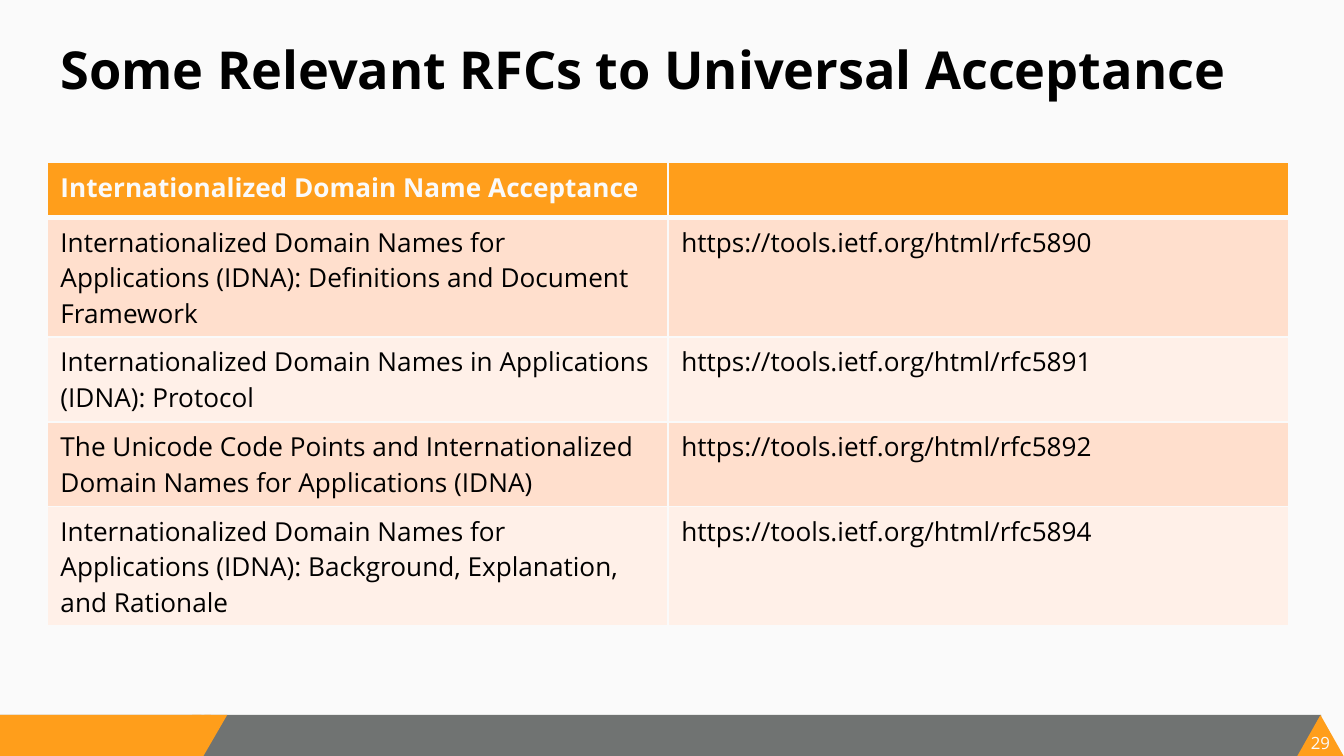
"""Build the slide that lists RFCs relevant to Universal Acceptance."""
import dataclasses

import pptx
import pptx.dml.color
import pptx.enum.shapes
import pptx.enum.text
import pptx.oxml
import pptx.oxml.ns
import pptx.util

Inches = pptx.util.Inches
Pt = pptx.util.Pt
RGB = pptx.dml.color.RGBColor.from_string
Shape = pptx.enum.shapes.MSO_SHAPE
Align = pptx.enum.text.PP_ALIGN
Anchor = pptx.enum.text.MSO_ANCHOR


@dataclasses.dataclass(frozen=True)
class Theme:
    font: str = "Open Sans"
    light: str = "FAFAFA"
    dark: str = "000000"
    orange: str = "FF9E1B"
    gray: str = "707372"
    bands: tuple = ("FFDFCD", "FFF0E8")
    title_size: int = 28
    table_size: int = 14
    number_size: int = 9


theme = Theme()


def write(frame, text, size, color, bold=False, align=Align.LEFT):
    for index, line in enumerate(text.split("\n")):
        para = frame.paragraphs[0] if index == 0 else frame.add_paragraph()
        para.alignment = align
        span = para.add_run()
        span.text = line
        span.font.name = theme.font
        span.font.size = Pt(size)
        span.font.bold = bold
        span.font.color.rgb = RGB(color)


def add_border(cell, side, width):
    cell._tc.get_or_add_tcPr().append(pptx.oxml.parse_xml(
        f'<a:{side} {pptx.oxml.ns.nsdecls("a")} w="{Pt(width)}">'
        f'<a:solidFill><a:srgbClr val="{theme.light}"/></a:solidFill></a:{side}>'))


deck = pptx.Presentation()
deck.slide_width = Inches(10)
deck.slide_height = Inches(10) * 9 // 16
page = deck.slides.add_slide(deck.slide_layouts[5])
page.background.fill.solid()
page.background.fill.fore_color.rgb = RGB(theme.light)

footer_top, footer_height = 5.32, 0.31
footer_parts = [
    (Shape.RECTANGLE, 0, 9.83, footer_height, theme.gray),
    (Shape.RECTANGLE, 0, 1.5, footer_height, theme.orange),
    (Shape.ISOSCELES_TRIANGLE, 9.65, 0.35, footer_height, theme.orange),
    (Shape.PARALLELOGRAM, 1.34, 0.35, footer_height, theme.orange),
    (Shape.RECTANGLE, 1.43, 0.14, 0.06, theme.orange),
]
for kind, left, width, height, color in footer_parts:
    part = page.shapes.add_shape(
        kind, Inches(left), Inches(footer_top), Inches(width), Inches(height))
    part.shadow.inherit = False
    part.fill.solid()
    part.fill.fore_color.rgb = RGB(color)
    part.line.fill.background()
    if kind == Shape.PARALLELOGRAM:
        part.adjustments[0] = 0.58
        part.rotation = 180

number_box = page.shapes.add_textbox(
    Inches(9.74), Inches(5.45), Inches(0.17), Inches(0.15))
number = number_box.text_frame
number.margin_left = number.margin_right = 0
number.margin_top = number.margin_bottom = 0
number.word_wrap = False
write(number, "29", theme.number_size, theme.light, align=Align.CENTER)

title = page.shapes.title
title.left, title.top = Inches(0.35), Inches(0.23)
title.width, title.height = Inches(9.24), Inches(0.94)
title.text_frame.vertical_anchor = Anchor.TOP
title.text_frame.word_wrap = True
title.text_frame.auto_size = pptx.enum.text.MSO_AUTO_SIZE.NONE
write(title.text_frame, "Some Relevant RFCs to Universal Acceptance",
      theme.title_size, theme.dark, bold=True)

link = "https://tools.ietf.org/html/rfc"
rows = [
    (0.41, "Internationalized Domain Name Acceptance", ""),
    (0.89, "Internationalized Domain Names for Applications (IDNA): "
     "Definitions and Document Framework", link + "5890"),
    (0.63, "Internationalized Domain Names in Applications\n(IDNA): Protocol",
     link + "5891"),
    (0.63, "The Unicode Code Points and Internationalized Domain Names for "
     "Applications (IDNA)", link + "5892"),
    (0.89, "Internationalized Domain Names for Applications (IDNA): "
     "Background, Explanation, and Rationale", link + "5894"),
]
table = page.shapes.add_table(
    len(rows), 2, Inches(0.35), Inches(1.21),
    Inches(9.24), Inches(sum(row[0] for row in rows))).table
for row_index, (row_height, *texts) in enumerate(rows):
    header = row_index == 0
    table.rows[row_index].height = Inches(row_height)
    for column_index, text in enumerate(texts):
        cell = table.cell(row_index, column_index)
        add_border(cell, "lnL", 1)
        add_border(cell, "lnR", 1)
        add_border(cell, "lnT", 3 if row_index == 1 else 1)
        add_border(cell, "lnB", 3 if header else 1)
        cell.fill.solid()
        cell.fill.fore_color.rgb = RGB(
            theme.orange if header else theme.bands[(row_index - 1) % 2])
        if text:
            write(cell.text_frame, text, theme.table_size,
                  theme.light if header else theme.dark, bold=header)

deck.save("out.pptx")
